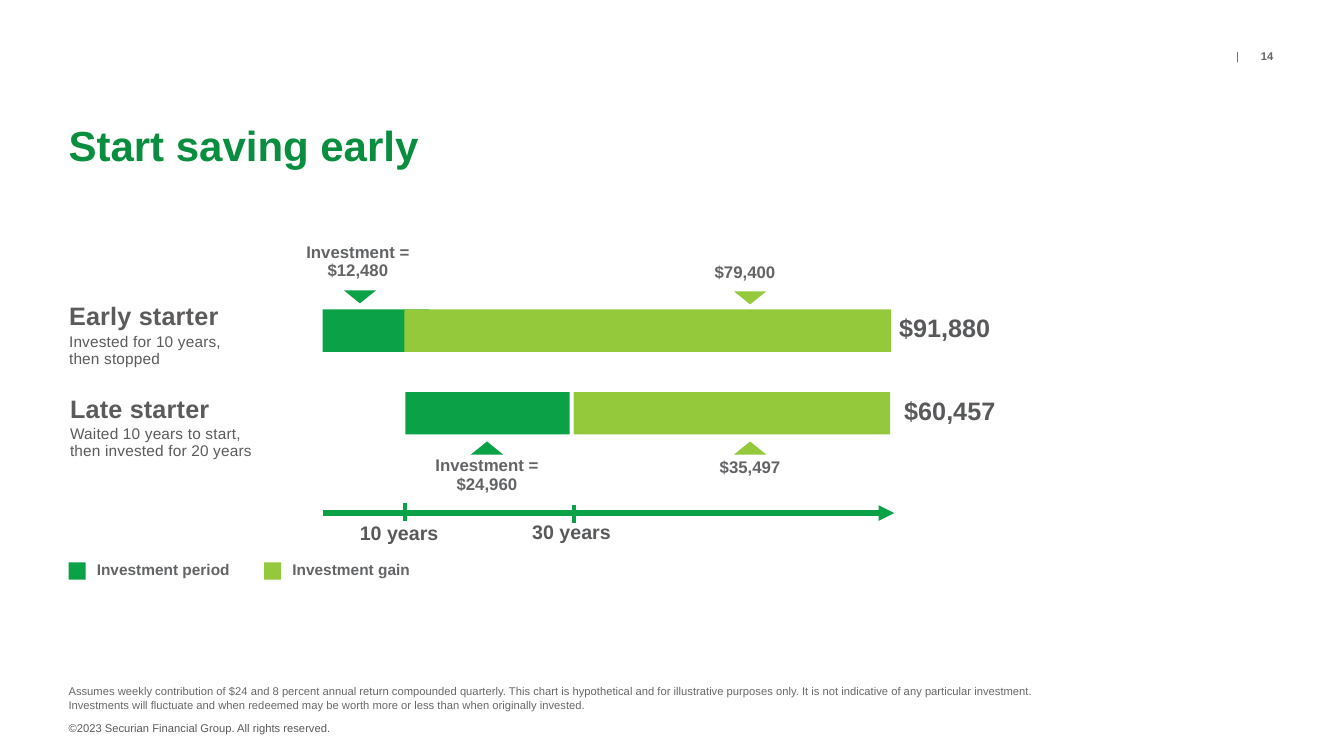
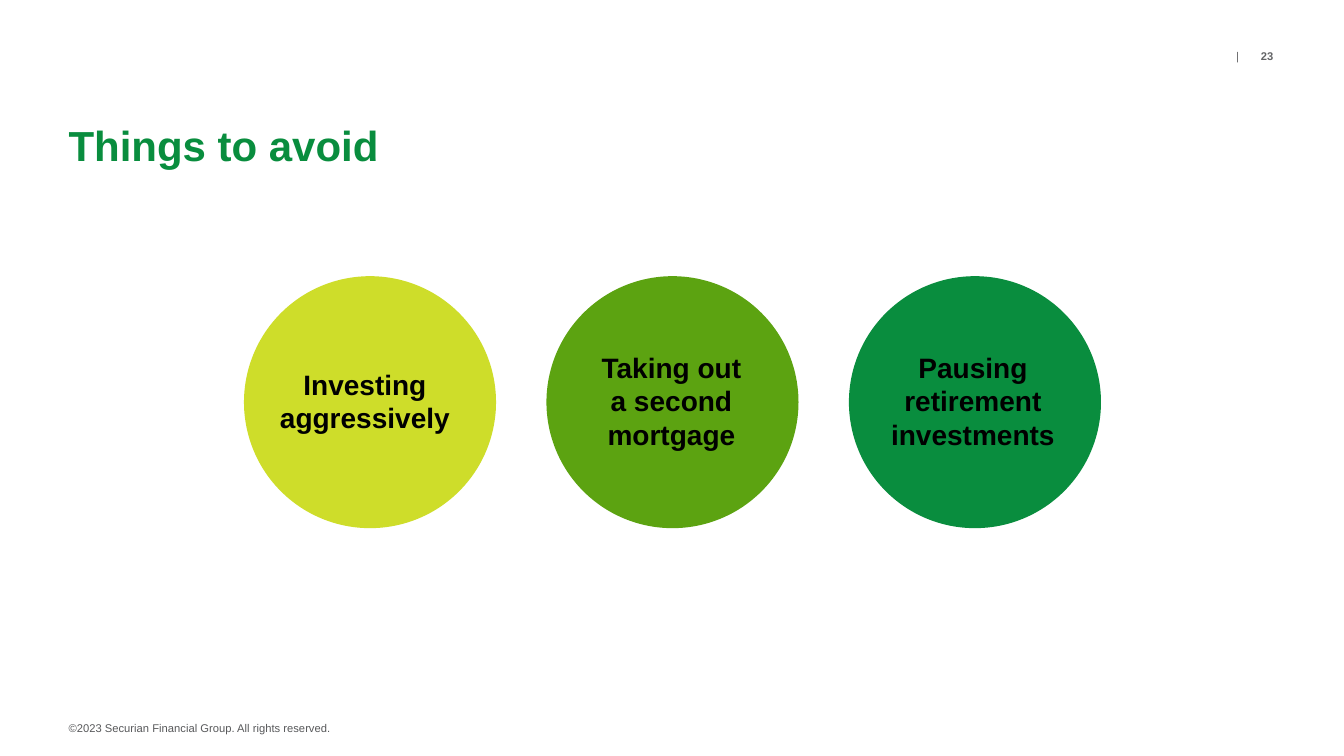
"""Two slides on saving early and on what to avoid, laid out on a grid of 0.1 inch cells."""
from lxml import etree
from pptx import Presentation
from pptx import util as u
from pptx.dml.color import RGBColor
from pptx.enum import shapes, text as tx
from pptx.oxml.ns import qn

CELL = u.Inches(0.1)
DARK, LIGHT, TITLE = "0AA147", "95C93C", "098D3E"
GREY, SLATE, LABEL, NOTE = "58595B", "5C5A5A", "636466", "696666"
LEFT, CENTER, RIGHT = tx.PP_ALIGN.LEFT, tx.PP_ALIGN.CENTER, tx.PP_ALIGN.RIGHT
RECT, OVAL = shapes.MSO_SHAPE.RECTANGLE, shapes.MSO_SHAPE.OVAL
TRIANGLE = shapes.MSO_SHAPE.ISOSCELES_TRIANGLE


def shape(s, kind, at, color):
    sp = s.shapes.add_shape(kind, *[int(v * CELL) for v in at])
    sp.shadow.inherit = False
    sp.fill.solid()
    sp.fill.fore_color.rgb = RGBColor.from_string(color)
    sp.line.fill.background()
    return sp


def text(s, t, at=None, tf=None, size=12, color=LABEL, bold=True, align=LEFT,
         line=None, before=0, spc=0, inset=(0, 0), anchor=tx.MSO_ANCHOR.TOP):
    if tf is None:
        tf = s.shapes.add_textbox(*[int(v * CELL) for v in at]).text_frame
        tf.word_wrap = True
        tf.vertical_anchor = anchor
        tf.margin_left = tf.margin_right = int(inset[0] * CELL)
        tf.margin_top = tf.margin_bottom = int(inset[1] * CELL)
        p = tf.paragraphs[0]
    else:
        p = tf.add_paragraph()
        p.space_before = u.Pt(before)
    p.text = t
    p.alignment = align
    if line:
        p.line_spacing = u.Pt(line)
    for r in p.runs:
        r.font.name, r.font.size, r.font.bold = "Arial", u.Pt(size), bold
        r.font.color.rgb = RGBColor.from_string(color)
        if spc:
            r._r.get_or_add_rPr().set("spc", str(spc))
    return tf


prs = Presentation()
prs.slide_width, prs.slide_height = u.Inches(13.33), u.Inches(7.5)
slides = []
for title, number in [("Start saving early", "14"), ("Things to avoid", "23")]:
    s = prs.slides.add_slide(prs.slide_layouts[6])
    slides.append(s)
    text(s, "|", (121.9, 4.9, 1, 1.5), size=8, bold=False, align=RIGHT)
    text(s, number, (123.3, 4.9, 3, 1.5), size=8, align=RIGHT)
    text(s, title, (6.8, 12.6, 46.2, 5.8), size=30, color=TITLE, line=31)
    text(s, "©2023 Securian Financial Group. All rights reserved.",
         (6.8, 71.6, 119.7, 1.5), size=8, color=GREY, bold=False)

s = slides[0]
PAD = (1, 0.5)

for name, detail, x, y in [
    ("Early starter", "Invested for 10 years,\vthen stopped", 6.85, 29.8),
    ("Late starter", "Waited 10 years to start,\vthen invested for 20 years", 6.95, 39),
]:
    tf = text(s, name, (x, y, 21.8, 6.7), size=18, color=SLATE, spc=15)
    text(s, detail, tf=tf, size=11, color=SLATE, bold=False, line=12.2, before=1.8, spc=12)

for label, color, x in [("Investment period", DARK, 6.8), ("Investment gain", LIGHT, 26.2)]:
    shape(s, RECT, (x, 55.8, 1.7, 1.7), color)
    text(s, label, (x + 2.8, 55.6, 16.8, 1.9), size=11)

for x, y, w, color in [(32, 30.7, 10.6, DARK), (40.1, 30.7, 48.3, LIGHT),
                       (40.2, 38.9, 16.3, DARK), (56.9, 38.9, 31.4, LIGHT)]:
    shape(s, RECT, (x, y, w, 4.2), color)

for x, y, color, turn in [(34.1, 28.8, DARK, 180), (72.8, 28.9, LIGHT, 180),
                          (46.7, 43.8, DARK, 0), (72.8, 43.8, LIGHT, 0)]:
    shape(s, TRIANGLE, (x, y, 3.2, 1.3), color).rotation = turn

for label, x, y, line in [("Investment = $12,480", 26.7, 23.6, 13.4), ("$79,400", 65.1, 25.5, None),
                          ("Investment = $24,960", 39.5, 44.8, 13.4), ("$35,497", 65.6, 44.8, None)]:
    text(s, label, (x, y, 17.6, 4.7 if line else 3.4), align=CENTER, line=line, inset=PAD)

for label, x, y, size in [("$91,880", 88.2, 30.5, 18), ("$60,457", 88.7, 38.7, 18),
                          ("10 years", 34.7, 51.2, 14), ("30 years", 51.8, 51.1, 14)]:
    text(s, label, (x, y, 17.6, 4), size=size, color=GREY, inset=PAD)

for x1, y1, x2, y2, width in [(32, 50.9, 88.7, 50.9, 3.75), (40.2, 49.9, 40.2, 51.7, 3),
                              (56.9, 50.1, 56.9, 51.9, 3)]:
    c = s.shapes.add_connector(shapes.MSO_CONNECTOR.STRAIGHT,
                               *[int(v * CELL) for v in (x1, y1, x2, y2)])
    c.line.color.rgb = RGBColor.from_string(DARK)
    c.line.width = u.Pt(width)
    if y1 == y2:
        etree.SubElement(c.line._get_or_add_ln(), qn("a:tailEnd"), type="triangle")
    etree.SubElement(c._element.spPr, qn("a:effectLst"))

text(s, "Assumes weekly contribution of $24 and 8 percent annual return compounded quarterly. "
     "This chart is hypothetical and for illustrative purposes only. It is not indicative of any "
     "particular investment. Investments will fluctuate and when redeemed may be worth more or "
     "less than when originally invested.",
     (6.8, 67.9, 98, 2.8), size=8, color=NOTE, bold=False)

s = slides[1]
for i, (label, color, dx, w) in enumerate([
    ("Investing aggressively", "CEDD2A", 2.5, 19),
    ("Taking out a second mortgage", "5CA311", 3.9, 17),
    ("Pausing retirement investments", TITLE, 2.8, 19),
]):
    x = 24.2 + 30 * i
    shape(s, OVAL, (x, 27.4, 25, 25), color)
    text(s, label, (x + dx, 34.2, w, 11.1), size=20, color="000000", align=CENTER,
         inset=PAD, anchor=tx.MSO_ANCHOR.MIDDLE)

prs.save("out.pptx")
